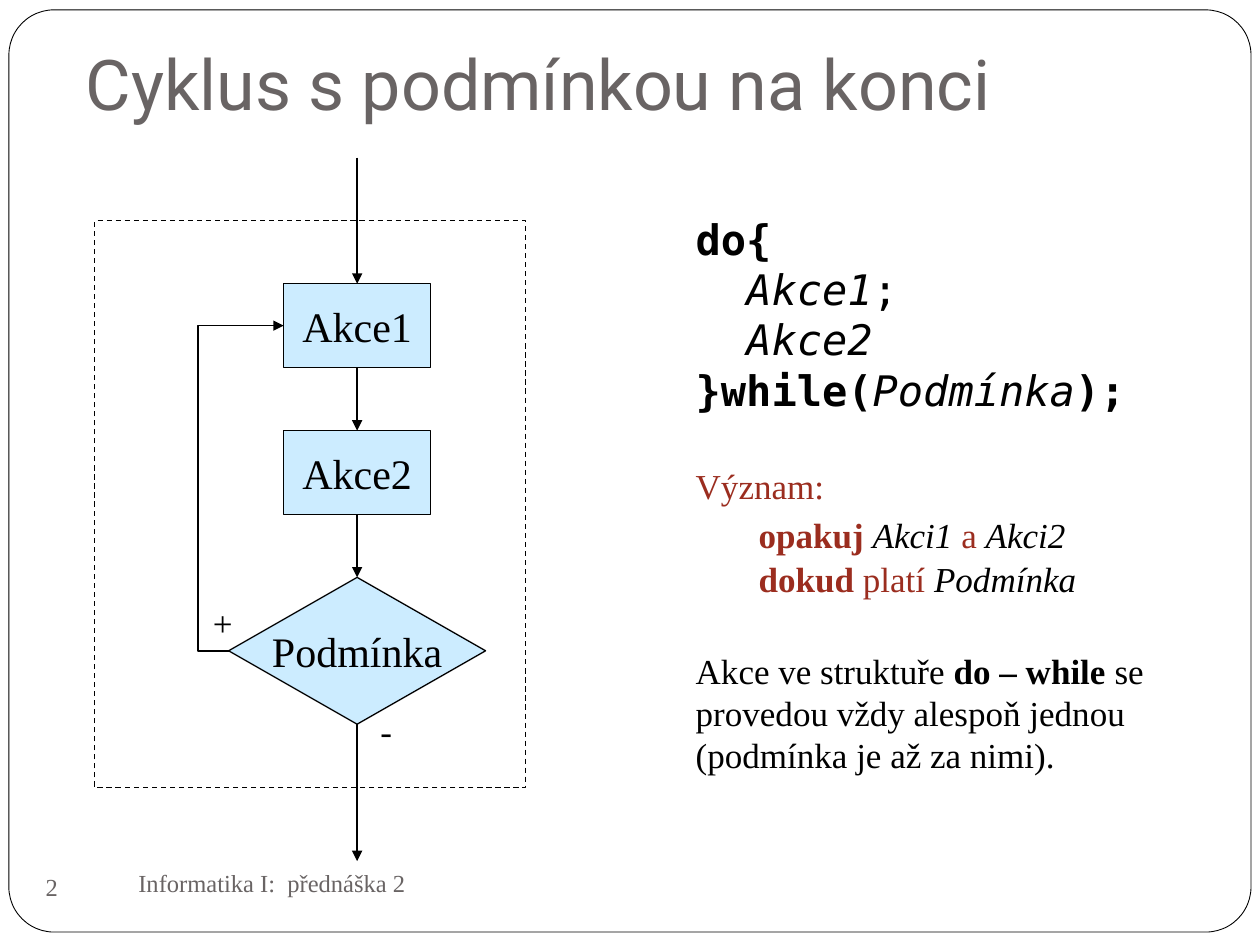
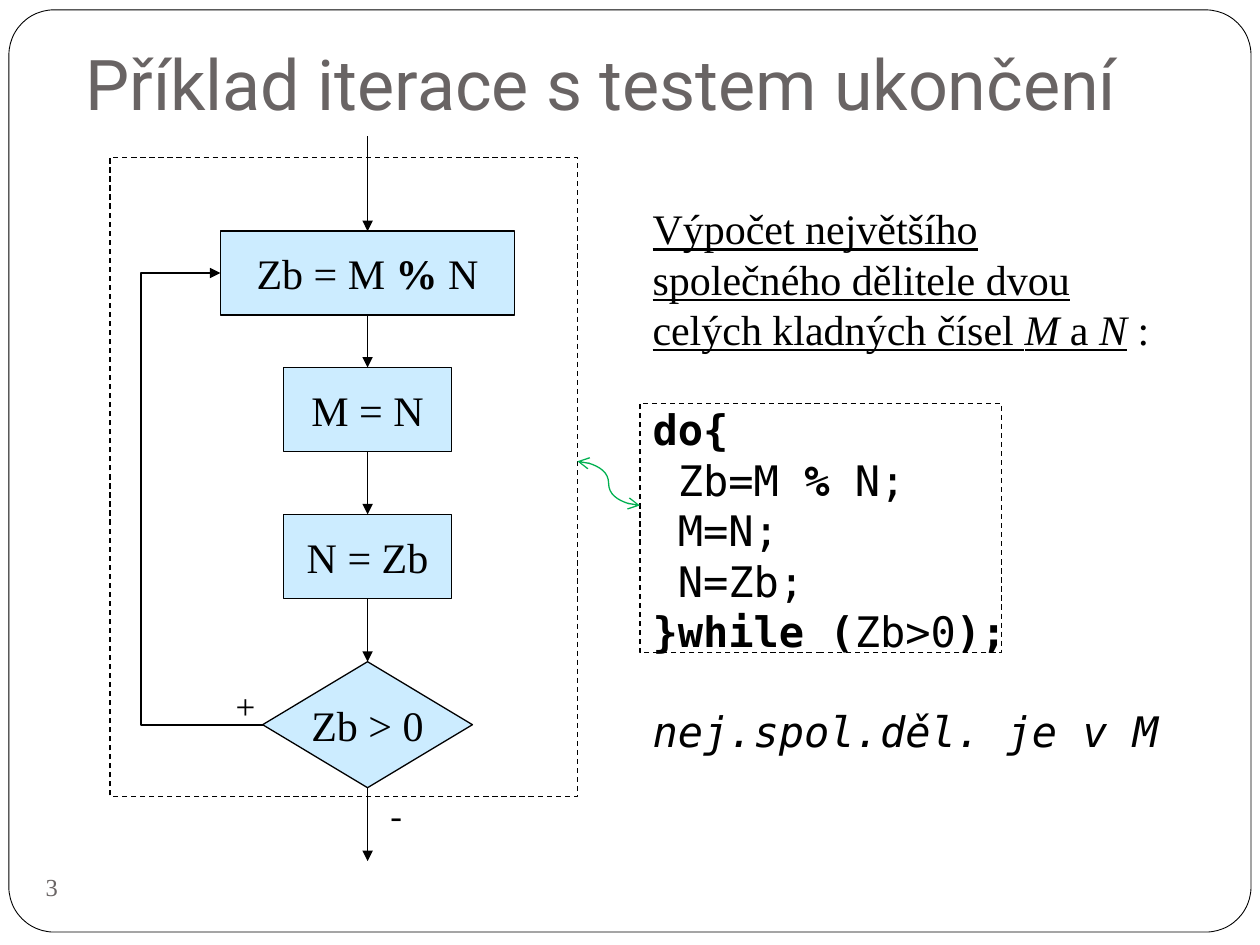
from lxml import etree
from pptx import Presentation
from pptx.dml.color import RGBColor
from pptx.enum.dml import MSO_LINE
from pptx.enum.shapes import MSO_CONNECTOR, MSO_SHAPE
from pptx.enum.text import MSO_ANCHOR, MSO_AUTO_SIZE, PP_ALIGN
from pptx.oxml.ns import qn
from pptx.util import Cm, Pt

DASH = MSO_LINE.DASH
LINE, ELBOW, CURVE = MSO_CONNECTOR.STRAIGHT, MSO_CONNECTOR.ELBOW, MSO_CONNECTOR.CURVE
RECT, ROUND = MSO_SHAPE.RECTANGLE, MSO_SHAPE.ROUNDED_RECTANGLE
STEP, TEST = MSO_SHAPE.FLOWCHART_PROCESS, MSO_SHAPE.FLOWCHART_DECISION
TOP, MIDDLE, BOTTOM = MSO_ANCHOR.TOP, MSO_ANCHOR.MIDDLE, MSO_ANCHOR.BOTTOM
FIT_NONE = MSO_AUTO_SIZE.NONE
LEFT, CENTER = PP_ALIGN.LEFT, PP_ALIGN.CENTER

HUES = {"ink": "000000", "gray": "696464", "red": "9B2D1F", "box": "CCECFF", "green": "00B050"}
SERIF, MONO, HEAD = "Times New Roman", "DejaVu Sans Mono", "Roboto"
GAP = 28.5
STEP_H = 1.69
EXIT = 17.36


def hue(name):
    return RGBColor.from_string(HUES[name])


class Deck:
    def __init__(self):
        self.show = Presentation()
        self.show.slide_width, self.show.slide_height = Cm(25.4), Cm(19.05)
        self.slide = None

    def page(self, title, number):
        self.slide = self.show.slides.add_slide(self.show.slide_layouts[1])
        self.panel(ROUND, 0.18, 0.2, 25.04, 18.59, 0.5).adjustments[0] = 0.049
        head = self.slide.shapes.title
        self.place(head, 1.47, 0.43, 21.79, 2.34)
        frame = head.text_frame
        frame.auto_size, frame.vertical_anchor = FIT_NONE, BOTTOM
        frame.margin_bottom = Cm(0.25)
        self.letter(frame.paragraphs[0], [(title, "")], 40, HEAD, "gray")
        self.label(number, 0.41, 17.25, 1.27, 1.27, 14, "gray", MIDDLE, CENTER)

    def place(self, shape, left, top, width, height):
        shape.left, shape.top = Cm(left), Cm(top)
        shape.width, shape.height = Cm(width), Cm(height)

    def letter(self, para, parts, size, font=SERIF, color="ink", align=LEFT):
        para.alignment = align
        for text, marks in parts:
            run = para.add_run()
            run.text = text
            face = run.font
            face.name, face.size = font, Pt(size)
            face.bold, face.italic, face.underline = (mark in marks for mark in "biu")
            face.color.rgb = hue("red" if "r" in marks else color)

    def label(self, text, left, top, width, height, size=20, color="ink", anchor=TOP, align=LEFT):
        box = self.slide.shapes.add_textbox(Cm(left), Cm(top), Cm(width), Cm(height))
        box.text_frame.word_wrap = True
        box.text_frame.vertical_anchor = anchor
        self.letter(box.text_frame.paragraphs[0], [(text, "")], size, color=color, align=align)

    def panel(self, kind, left, top, width, height, weight=0.75, fill=None):
        shape = self.slide.shapes.add_shape(kind, Cm(left), Cm(top), Cm(width), Cm(height))
        shape.shadow.inherit = False
        shape.line.color.rgb = hue("ink")
        shape.line.width = Pt(weight)
        if fill:
            shape.fill.solid()
            shape.fill.fore_color.rgb = hue(fill)
        else:
            shape.fill.background()
        return shape

    def dashed(self, left, top, width, height):
        self.panel(RECT, left, top, width, height).line.dash_style = DASH

    def node(self, kind, parts, mid, top, width, height):
        shape = self.panel(kind, mid - width / 2, top, width, height, fill="box")
        shape.text_frame.word_wrap = False
        shape.text_frame.vertical_anchor = MIDDLE
        self.letter(shape.text_frame.paragraphs[0], parts, 24, align=CENTER)
        return shape

    def link(self, start, end, kind=LINE, weight=1, color="ink", bend=None, ends=(("tailEnd", "triangle"),)):
        wire = self.slide.shapes.add_connector(kind, *map(Cm, start + end))
        wire.line.color.rgb = hue(color)
        wire.line.width = Pt(weight)
        props = wire._element.spPr.find(qn("a:ln"))
        for tag, tip in ends:
            etree.SubElement(props, qn("a:" + tag), type=tip)
        etree.SubElement(wire._element.spPr, qn("a:effectLst"))
        if bend is not None:
            guides = wire._element.spPr.find(qn("a:prstGeom")).find(qn("a:avLst"))
            etree.SubElement(guides, qn("a:gd"), name="adj1", fmla=f"val {round(bend * 100000)}")
        return wire

    def flow(self, mid, entry, steps, test, turn, weights):
        nodes = [self.node(STEP, parts, mid, top, width, STEP_H) for parts, top, width in steps]
        text, top, width, height = test
        nodes.append(self.node(TEST, [(text, "")], mid, top, width, height))
        for above, below, weight in zip([None] + nodes, nodes + [None], weights):
            wire = self.link((mid, entry), (mid, EXIT), weight=weight)
            if above:
                wire.begin_connect(above, 2)
            if below:
                wire.end_connect(below, 0)
        start = (mid - width / 2, top + height / 2)
        end = (mid - steps[0][2] / 2, steps[0][1] + STEP_H / 2)
        self.link(start, end, ELBOW, bend=(turn - start[0]) / (end[0] - start[0]))

    def body(self, lines, left, top, width, height):
        holder = self.slide.placeholders[1]
        self.place(holder, left, top, width, height)
        frame = holder.text_frame
        frame.auto_size, frame.vertical_anchor = FIT_NONE, TOP
        for index, (parts, size, font, indent, before) in enumerate(lines):
            para = frame.add_paragraph() if index else frame.paragraphs[0]
            para.space_before = Pt(before)
            props = para._p.get_or_add_pPr()
            props.set("marL", str(Cm(indent)))
            props.set("indent", "0")
            etree.SubElement(props, qn("a:buNone"))
            self.letter(para, parts, size, font)


def code(*parts, indent=0, before=0):
    return parts, 24, MONO, indent, before


def prose(*parts, size=20, indent=0, before=0):
    return parts, size, SERIF, indent, before


def syntax(deck):
    deck.page("Cyklus s podmínkou na konci", "2")
    deck.label("Informatika I:  přednáška 2", 2.54, 17.15, 11, 1.27, 14, "gray", MIDDLE)
    deck.dashed(1.91, 4.45, 8.69, 11.43)
    steps = [([("Akce1", "")], 5.72, 2.96), ([("Akce2", "")], 8.68, 2.96)]
    deck.flow(7.2, 3.18, steps, ("Podmínka", 11.64, 5.18, 2.96), 3.99, [1] * 4)
    deck.label("-", 7.42, 14.17, 0.76, 1.12)
    deck.label("+", 4.04, 12.01, 1.68, 1.12)
    deck.body([
        code(("do{", "b")),
        code(("Akce1", "i"), (";", ""), indent=1.02),
        code(("Akce2", "i"), indent=1.02),
        code(("}while(", "b"), ("Podmínka", "i"), (");", "b")),
        prose(("Význam:", "r"), before=GAP),
        prose(("opakuj ", "br"), ("Akci1 ", "i"), ("a ", "r"), ("Akci2", "i"), indent=1.27, before=4),
        prose(("dokud", "br"), (" platí ", "r"), ("Podmínka", "i"), indent=1.27, before=1),
        prose(("Akce ve struktuře ", ""), ("do – while ", "b"),
              ("se provedou vždy alespoň jednou (podmínka je až za nimi).", ""), before=GAP),
    ], 13.77, 4.17, 10.13, 11.71)


def sample(deck):
    deck.page("Příklad iterace s testem ukončení", "3")
    deck.dashed(2.22, 3.18, 9.42, 12.88)
    deck.dashed(12.9, 8.13, 7.29, 5.03)
    steps = [
        ([("Zb = M ", ""), ("%", "b"), (" N", "")], 4.66, 5.93),
        ([("M = N", "")], 7.41, 3.39),
        ([("N = Zb", "")], 10.37, 3.39),
    ]
    deck.flow(7.41, 2.75, steps, ("Zb > 0", 13.34, 4.23, 2.54), 2.85, [0.75, 0.75, 1, 1, 1])
    deck.label("-", 7.62, 15.88, 0.76, 1.12)
    deck.label("+", 4.5, 13.67, 1.6, 1.12)
    deck.link((11.64, 9.3), (12.9, 10.19), CURVE, 0.75, "green",
              ends=(("headEnd", "arrow"), ("tailEnd", "arrow")))
    deck.body([
        prose(("Výpočet největšího společného dělitele dvou celých kladných čísel ", "u"),
              ("M", "iu"), (" a ", "u"), ("N", "iu"), (" :", ""), size=24),
        code(("do{", "b"), before=GAP),
        code(("Zb=M ", ""), ("%", "b"), (" N;", ""), indent=0.51),
        code(("M=N;", ""), indent=0.51),
        code(("N=Zb;", ""), indent=0.51),
        code(("}while (", "b"), ("Zb>0", ""), (");", "b")),
        code(("nej.spol.děl. je v M", "i"), before=GAP),
    ], 12.9, 3.96, 11, 11.56)


def main():
    deck = Deck()
    syntax(deck)
    sample(deck)
    deck.show.save("out.pptx")


if __name__ == "__main__":
    main()
